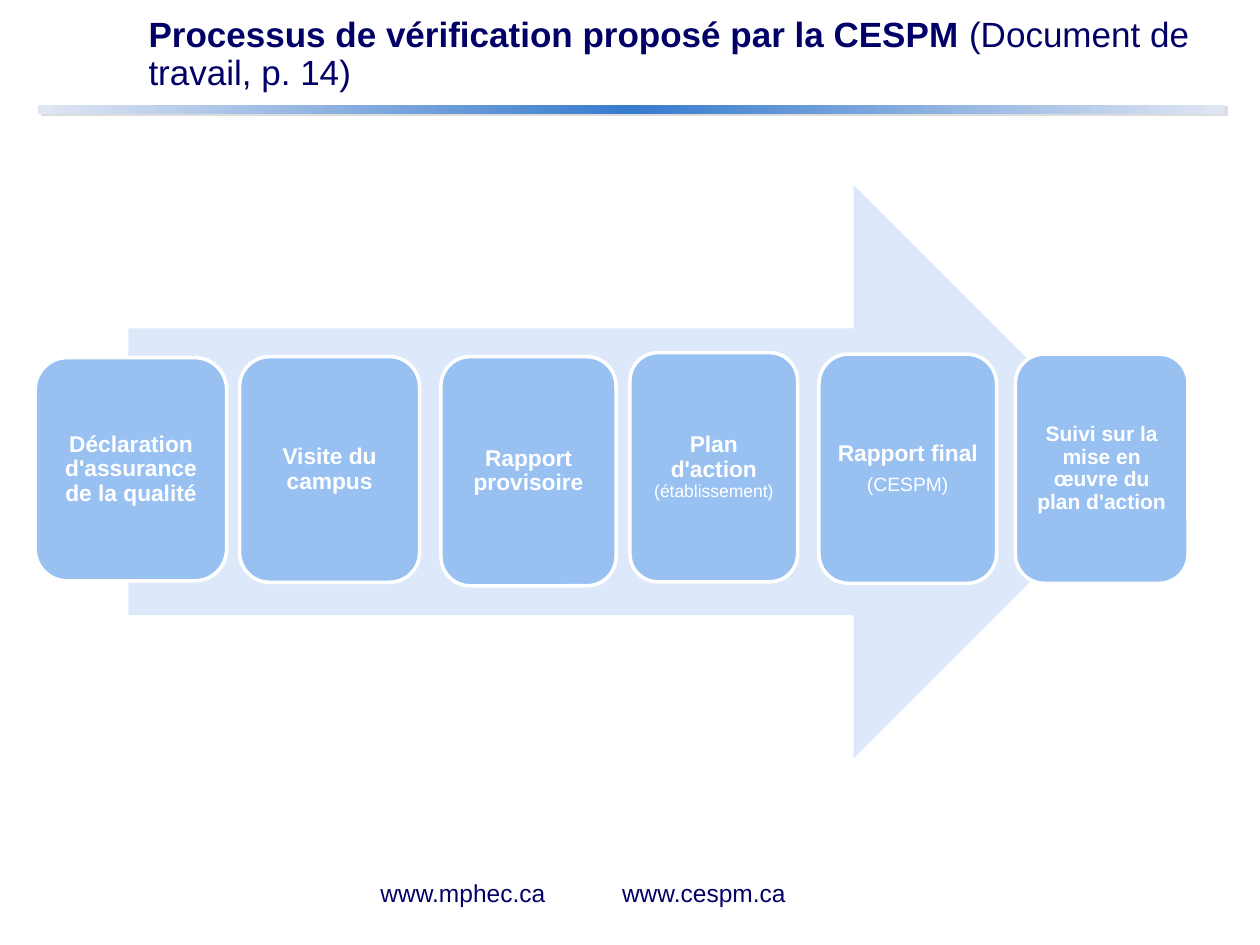
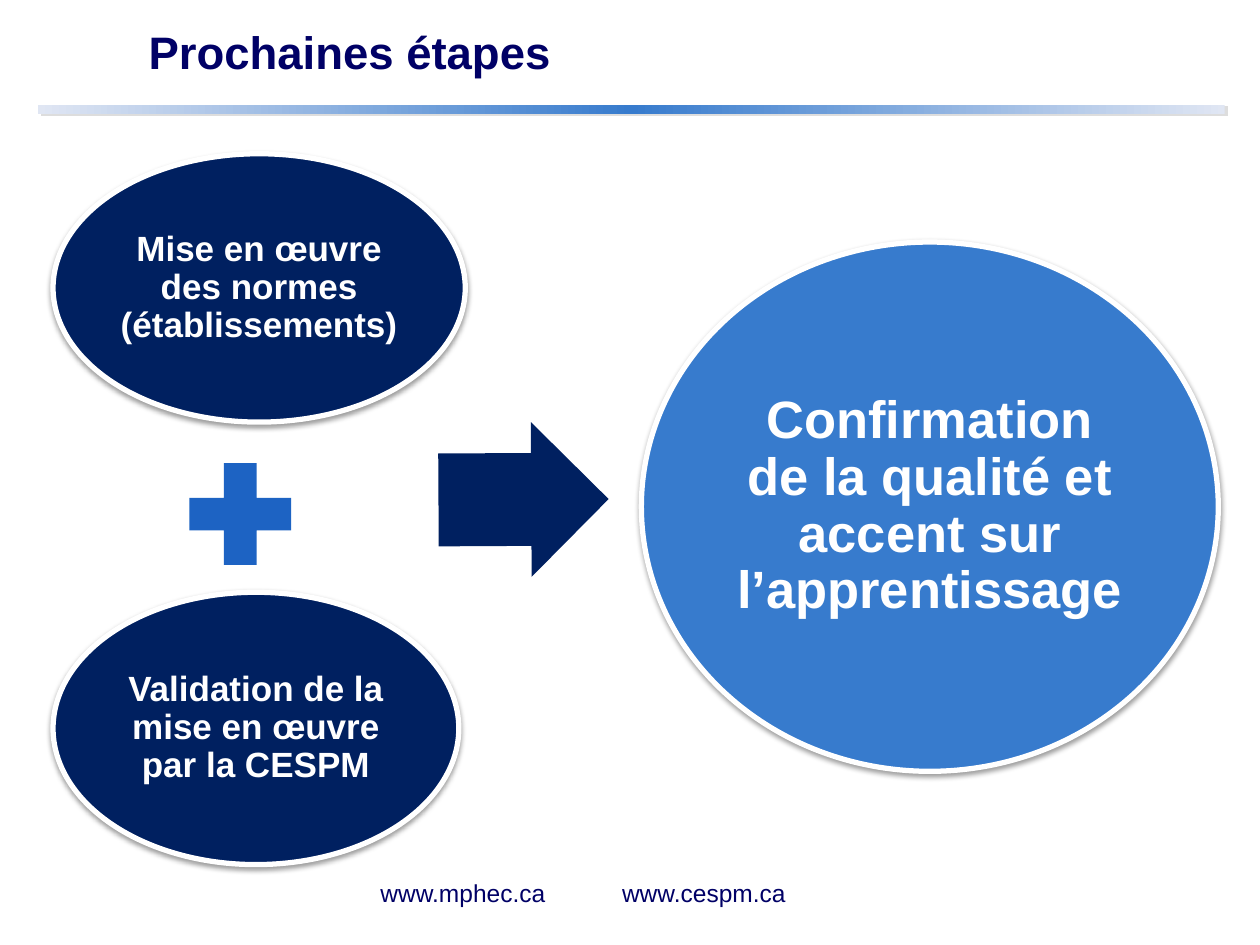
from copy import deepcopy

from lxml.etree import SubElement
from pptx import Presentation
from pptx.dml.color import RGBColor
from pptx.enum.shapes import MSO_SHAPE as Preset
from pptx.enum.text import MSO_ANCHOR as Anchor, MSO_AUTO_SIZE as AutoSize, PP_ALIGN as Align
from pptx.oxml.ns import qn
from pptx.util import Cm, Pt

FONT = "Arial"
NAVY, DARK, BLUE, PLUS_BLUE = "000066", "002060", "377BCD", "1D63C3"
SKY, PALE, BAND_END, WHITE = "98C1F2", "DDE9FA", "E0E6F3", "FFFFFF"

# A paragraph is a list of spans: (text, size, bold).
PROCESS_TITLE = [("Processus de vérification proposé par la CESPM ", 20, True),
                 ("(Document de travail, p. 14)", 20, False)]
NEXT_TITLE = [("Prochaines étapes", 26, True)]

BAND = (0.76, 2.11, 23.93, 0.2)
FOOTERS = [("www.mphec.ca", 6.2, Align.RIGHT), ("www.cespm.ca", 12.29, Align.LEFT)]

PROCESS_ARROW = (2.59, 3.73, 20.4, 11.56)
STEPS = [
    ((0.71, 7.21, 3.86, 4.5), [[("Déclaration d'assurance de la qualité", 13, True)]]),
    ((4.83, 7.19, 3.63, 4.55), [[("Visite du campus", 13, True)]]),
    ((8.89, 7.19, 3.53, 4.62), [[("Rapport provisoire", 13, True)]]),
    ((12.7, 7.11, 3.38, 4.62), [[("Plan d'action ", 13, True), ("(établissement)", 10, False)]]),
    ((16.51, 7.14, 3.58, 4.62), [[("Rapport final", 13, True)], [("(CESPM)", 11, False)]]),
    ((20.47, 7.14, 3.48, 4.62), [[("Suivi sur la mise en œuvre du plan d'action", 12, True)]]),
]

OVALS = [
    ((1.07, 3.1, 8.31, 5.41), DARK, 20, "Mise en œuvre des normes (établissements)"),
    ((1.07, 11.94, 8.18, 5.49), DARK, 20, "Validation de la mise en œuvre par la CESPM"),
    ((12.93, 4.88, 11.63, 10.67), BLUE, 30,
     "Confirmation de la qualité et accent sur l’apprentissage"),
]
PLUS = (3.45, 8.97, 2.79, 2.79)
RESULT_ARROW = (8.84, 8.51, 3.43, 3.12)


def rgb(color):
    return RGBColor.from_string(color)


def write(box, paragraphs, color=WHITE, align=Align.CENTER, anchor=Anchor.MIDDLE,
          spacing=0.9, inset=None):
    frame = box.text_frame
    frame.word_wrap = True
    frame.auto_size = AutoSize.NONE
    frame.vertical_anchor = anchor
    if inset is not None:
        frame.margin_left = frame.margin_right = Cm(inset)
        frame.margin_top = frame.margin_bottom = Cm(inset)
    for index, spans in enumerate(paragraphs):
        para = frame.add_paragraph() if index else frame.paragraphs[0]
        para.alignment = align
        para.line_spacing = spacing
        para.space_before = Pt(4.5 if index else 0)
        for text, size, bold in spans:
            span = para.add_run()
            span.text = text
            font = span.font
            font.name, font.size, font.bold = FONT, Pt(size), bold
            font.color.rgb = rgb(color)


def add_preset(slide, preset, place, fill, outline=0):
    shape = slide.shapes.add_shape(preset, *map(Cm, place))
    shape.shadow.inherit = False
    shape.fill.solid()
    shape.fill.fore_color.rgb = rgb(fill)
    if outline:
        shape.line.color.rgb = rgb(WHITE)
        shape.line.width = Pt(outline)
    else:
        shape.line.fill.background()
    return shape


def cast_shadow(shape, color, opacity, blur, distance, angle):
    """Blur and distance are in points, the angle in degrees, the opacity in percent."""
    effects = shape._element.spPr.find(qn("a:effectLst"))
    shadow = SubElement(effects, qn("a:outerShdw"), blurRad=str(Pt(blur)),
                        dist=str(Pt(distance)), dir=str(angle * 60000), rotWithShape="0")
    tint = SubElement(shadow, qn("a:srgbClr"), val=color)
    SubElement(tint, qn("a:alpha"), val=str(opacity * 1000))


def add_band(slide):
    band = add_preset(slide, Preset.RECTANGLE, BAND, BLUE)
    band.fill.gradient()
    band.fill.gradient_angle = 0
    stops = band._element.spPr.find(".//" + qn("a:gsLst"))
    stops.append(deepcopy(stops[0]))
    for stop, position, color in zip(band.fill.gradient_stops, (0, 0.5, 1),
                                     (BAND_END, BLUE, BAND_END)):
        stop.position = position
        stop.color.rgb = rgb(color)
    cast_shadow(band, "DDDDDD", 100, 0, 2.2, 27)


def add_page(deck, title, title_width):
    """Add a slide with the shared band, footers and title style."""
    page = deck.slides.add_slide(deck.slide_layouts[5])
    heading = page.shapes.title
    heading.left, heading.top = Cm(2.74), Cm(0.08)
    heading.width, heading.height = Cm(title_width), Cm(2.06)
    write(heading, [title], color=NAVY, align=Align.LEFT)
    add_band(page)
    for address, left, align in FOOTERS:
        footer = page.shapes.add_textbox(Cm(left), Cm(17.58), Cm(5.05), Cm(0.86))
        write(footer, [[(address, 14, False)]], color=NAVY, align=align,
              anchor=Anchor.TOP, spacing=1.0)
    return page


def build_process(deck):
    page = add_page(deck, PROCESS_TITLE, 22.66)
    add_preset(page, Preset.RIGHT_ARROW, PROCESS_ARROW, PALE)
    for place, paragraphs in STEPS:
        step = add_preset(page, Preset.ROUNDED_RECTANGLE, place, SKY, outline=2)
        write(step, paragraphs, inset=0.13)


def build_next_steps(deck):
    page = add_page(deck, NEXT_TITLE, 21.92)
    for place, fill, size, text in OVALS:
        oval = add_preset(page, Preset.OVAL, place, fill, outline=3)
        cast_shadow(oval, "000000", 38, 3.1, 1.6, 90)
        write(oval, [[(text, size, True)]], inset=0.08)
    add_preset(page, Preset.MATH_PLUS, PLUS, PLUS_BLUE)
    arrow = add_preset(page, Preset.RIGHT_ARROW, RESULT_ARROW, DARK)
    arrow.adjustments[0] = 0.6
    arrow.rotation = 359.7


def main():
    deck = Presentation()
    deck.slide_width, deck.slide_height = Cm(25.4), Cm(19.05)
    build_process(deck)
    build_next_steps(deck)
    deck.save("out.pptx")


if __name__ == "__main__":
    main()
